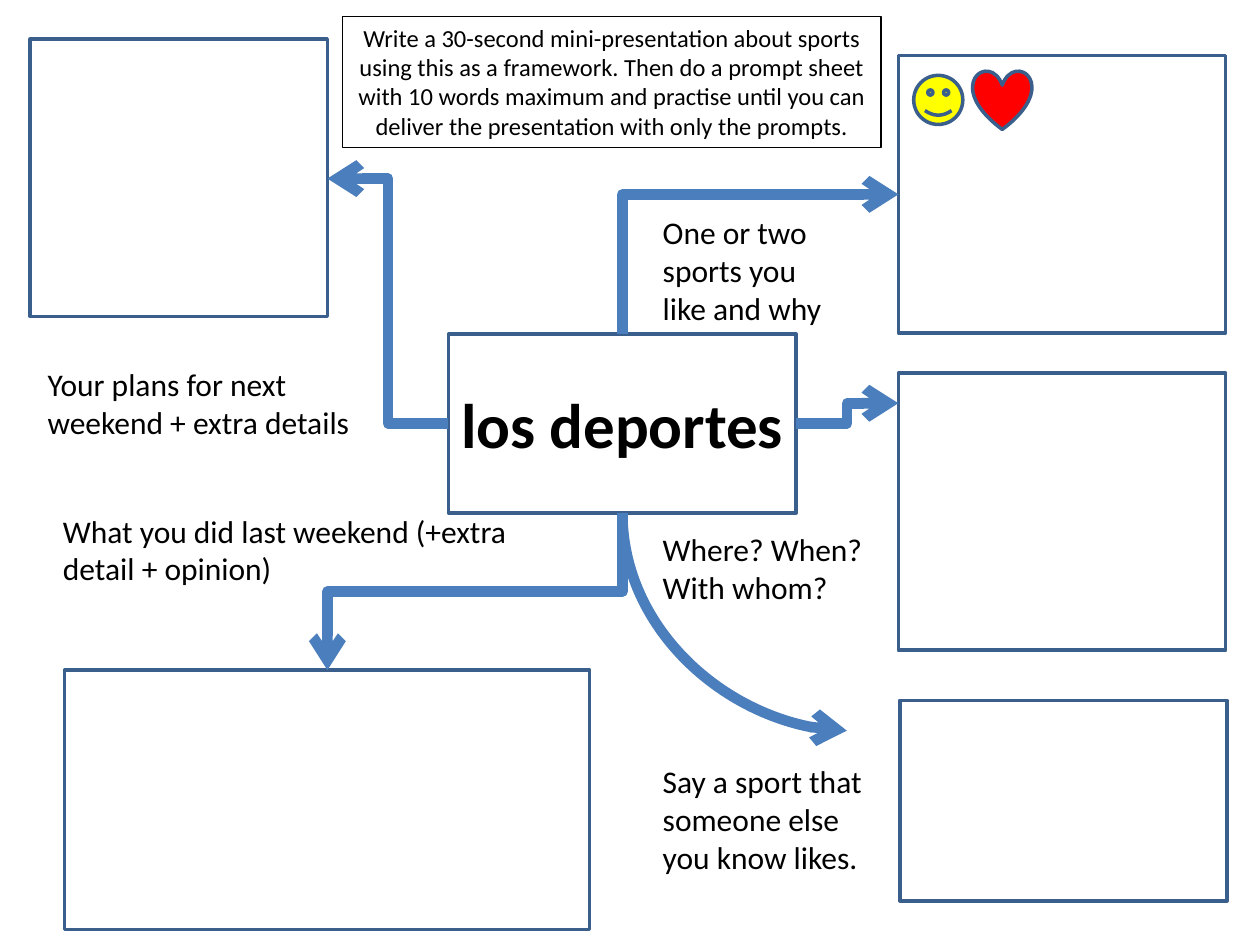
from lxml.etree import SubElement
from pptx import Presentation
from pptx.dml.color import RGBColor
from pptx.enum.shapes import MSO_CONNECTOR as Link, MSO_SHAPE as Shape
from pptx.enum.text import MSO_ANCHOR as Anchor, MSO_AUTO_SIZE as AutoSize, PP_ALIGN as Align
from pptx.oxml.ns import qn
from pptx.util import Cm, Pt

BORDER, ARROW, BLACK = "3A5F8C", "4B7EBC", "000000"

TOPIC = ("los deportes", (9.04, 6.73, 7.01, 3.61))
TASK = (
    "Write a 30-second mini-presentation about sports using this as a framework. "
    "Then do a prompt sheet with 10 words maximum and practise until you can "
    "deliver the presentation with only the prompts.",
    (6.91, 0.33, 10.85, 2.64),
)
PROMPTS = [
    ("One or two sports you like and why", (13.11, 4.17, 3.81, 2.57)),
    ("Where? When?\vWith whom?", (13.11, 10.57, 4.85, 1.8)),
    ("Say a sport that someone else you know likes.", (13.11, 15.24, 4.85, 2.57)),
    ("What you did last weekend (+extra detail + opinion)", (1.02, 10.19, 9.47, 1.8)),
    ("Your plans for next weekend + extra details", (0.71, 7.24, 6.81, 1.8)),
]
ANSWERS = [
    (Shape.RECTANGLE, (18.11, 1.12, 6.6, 5.59), None),
    (Shape.SMILEY_FACE, (18.42, 1.52, 0.99, 0.99), "FFFF00"),
    (Shape.HEART, (19.61, 1.42, 1.19, 1.19), "FF0000"),
    (Shape.RECTANGLE, (18.11, 7.52, 6.6, 5.59), None),
    (Shape.RECTANGLE, (18.14, 14.12, 6.6, 4.04), None),
    (Shape.RECTANGLE, (1.3, 13.51, 10.59, 5.23), None),
    (Shape.RECTANGLE, (0.61, 0.79, 5.99, 5.59), None),
]
LEFT, TOP, WIDTH, HEIGHT = TOPIC[1]
RIGHT, BOTTOM = LEFT + WIDTH, TOP + HEIGHT
MID_X, MID_Y = LEFT + WIDTH / 2, TOP + HEIGHT / 2
ROUTES = [
    ("bentConnector2", (MID_X, TOP), (18.11, 3.92), 90),
    ("bentConnector3", (RIGHT, MID_Y), (18.11, 8.13), 0),
    ("curvedConnector2", (MID_X, BOTTOM), (17.07, 14.73), 270),
    ("bentConnector3", (LEFT, MID_Y), (6.6, 3.6), 180),
    ("bentConnector3", (MID_X, BOTTOM), (6.6, 13.51), 90),
]


def color(value):
    return RGBColor.from_string(value)


def lengths(values):
    return [Cm(value) for value in values]


def outline(item, line_color, width):
    item.line.color.rgb = color(line_color)
    item.line.width = Pt(width)


def write(item, text, size=18, bold=False, align=Align.LEFT, anchor=Anchor.TOP):
    frame = item.text_frame
    frame.word_wrap = True
    frame.auto_size = AutoSize.NONE
    frame.vertical_anchor = anchor
    paragraph = frame.paragraphs[0]
    paragraph.text = text
    paragraph.alignment = align
    font = paragraph.font
    font.name, font.size, font.bold = "Calibri", Pt(size), bold
    font.color.rgb = color(BLACK)


def add_answer(slide, kind, place, fill):
    answer = slide.shapes.add_shape(kind, *lengths(place))
    answer.shadow.inherit = False
    if fill:
        answer.fill.solid()
        answer.fill.fore_color.rgb = color(fill)
    else:
        answer.fill.background()
    outline(answer, BORDER, 2)


def add_route(slide, preset, start, end, turn):
    dx, dy = end[0] - start[0], end[1] - start[1]
    dx, dy = {0: (dx, dy), 90: (dy, -dx), 180: (-dx, -dy), 270: (-dy, dx)}[turn]
    x, y = (start[0] + end[0]) / 2, (start[1] + end[1]) / 2
    corners = lengths((x - dx / 2, y - dy / 2, x + dx / 2, y + dy / 2))
    route = slide.shapes.add_connector(Link.ELBOW, *corners)
    outline(route, ARROW, 6)
    properties = route._element.spPr
    properties.find(qn("a:xfrm")).set("rot", str(turn * 60000))
    properties.find(qn("a:prstGeom")).set("prst", preset)
    SubElement(properties.find(qn("a:ln")), qn("a:tailEnd"), type="arrow")
    SubElement(properties, qn("a:effectLst"))


def add_topic(slide, text, place):
    topic = slide.shapes.title
    topic.left, topic.top, topic.width, topic.height = lengths(place)
    geometry = SubElement(topic._element.spPr, qn("a:prstGeom"), prst="roundRect")
    SubElement(geometry, qn("a:avLst"))
    outline(topic, BORDER, 2)
    write(topic, text, size=36, bold=True, align=Align.CENTER, anchor=Anchor.MIDDLE)


def main():
    deck = Presentation()
    deck.slide_width, deck.slide_height = Cm(25.4), Cm(19.05)
    slide = deck.slides.add_slide(deck.slide_layouts[5])
    add_topic(slide, *TOPIC)
    for answer in ANSWERS:
        add_answer(slide, *answer)
    for route in ROUTES:
        add_route(slide, *route)
    task_text, task_place = TASK
    task = slide.shapes.add_textbox(*lengths(task_place))
    outline(task, BLACK, 0.75)
    write(task, task_text, size=14, align=Align.CENTER)
    for text, place in PROMPTS:
        write(slide.shapes.add_textbox(*lengths(place)), text)
    deck.save("out.pptx")


if __name__ == "__main__":
    main()
